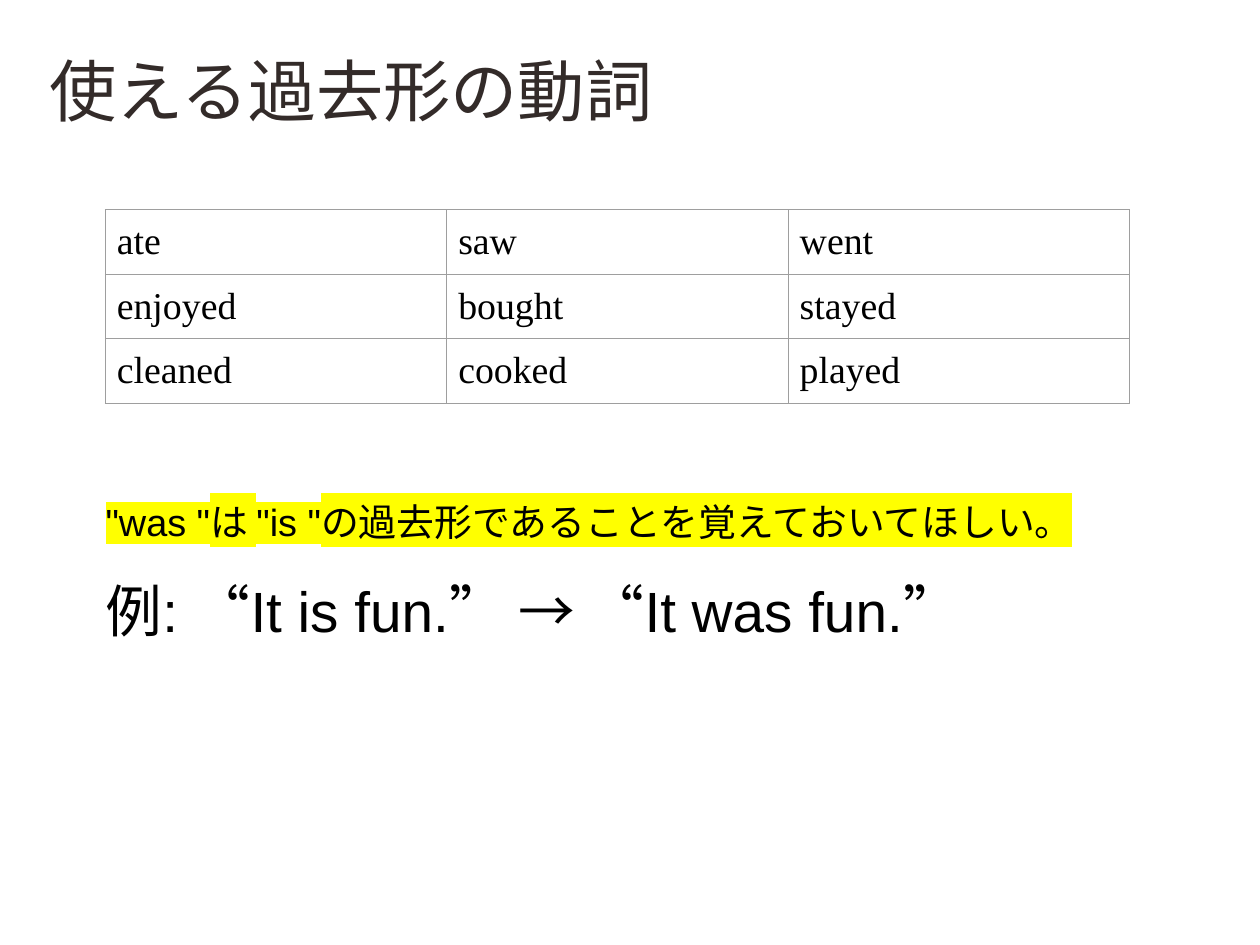
import pptx
import pptx.util
import pptx.dml.color
import pptx.enum.text
import pptx.oxml
import pptx.oxml.ns
from dataclasses import dataclass

TITLE = "使える過去形の動詞"
VERBS = [
    ("ate", "saw", "went"),
    ("enjoyed", "bought", "stayed"),
    ("cleaned", "cooked", "played"),
]
RULE = '"was "は "is "の過去形であることを覚えておいてほしい。'
SAMPLE = "例: “It is fun.” → “It was fun.”"


@dataclass
class Theme:
    serif: str = "Times New Roman"
    sans: str = "Arial"
    brown: str = "332B29"
    black: str = "000000"
    grey: str = "9E9E9E"
    yellow: str = "FFFF00"
    head: float = 42.7
    big: int = 36
    base: int = 24
    edge: float = 0.75
    lead: float = 0.9
    gap: int = 25


look = Theme()
Inches, Pt = pptx.util.Inches, pptx.util.Pt
WIDE, HIGH = Inches(11.11), Inches(8.33)
PAD = Inches(0.1)

# Boxes as left, top, width and height shares of the slide
HEAD = (0.03, 0.04, 0.94, 0.12)
GRID = (0.0837, 0.222, 0.813, 0.205)
NOTE = (0.075, 0.521, 0.874, 0.306)


def place(box):
    return [round(share * side) for share, side in zip(box, (WIDE, HIGH) * 2)]


def style(para, face, size, color):
    for run in para.runs:
        run.font.name = face
        run.font.size = Pt(size)
        run.font.color.rgb = pptx.dml.color.RGBColor.from_string(color)


def inset(item):
    item.margin_left = item.margin_right = PAD
    item.margin_top = item.margin_bottom = PAD


def add(parent, xml):
    node = pptx.oxml.parse_xml(xml.replace(
        ">", " " + pptx.oxml.ns.nsdecls("a") + ">", 1))
    parent.append(node)
    return node


def mark(run, color):
    """Highlight a run that already has its font colour."""
    props = run.font._element
    node = add(props, f'<a:highlight><a:srgbClr val="{color}"/></a:highlight>')
    props.find(pptx.oxml.ns.qn("a:solidFill")).addnext(node)


def border(cell):
    props = cell._tc.get_or_add_tcPr()
    for spot, side in enumerate("LRTB"):
        node = add(props, f'<a:ln{side} w="{Pt(look.edge)}"><a:solidFill>'
                   f'<a:srgbClr val="{look.grey}"/></a:solidFill></a:ln{side}>')
        props.insert(spot, node)


def title(slide):
    shape = slide.shapes.title
    shape.left, shape.top, shape.width, shape.height = place(HEAD)
    frame = shape.text_frame
    frame.text = TITLE
    frame.auto_size = pptx.enum.text.MSO_AUTO_SIZE.NONE
    frame.vertical_anchor = pptx.enum.text.MSO_ANCHOR.MIDDLE
    inset(frame)
    para = frame.paragraphs[0]
    para.alignment = pptx.enum.text.PP_ALIGN.LEFT
    para.line_spacing = look.lead
    style(para, look.serif, look.head, look.brown)


def table(slide):
    grid = slide.shapes.add_table(len(VERBS), len(VERBS[0]), *place(GRID)).table
    grid.first_row = grid.horz_banding = False
    for row, words in enumerate(VERBS):
        for col, word in enumerate(words):
            cell = grid.cell(row, col)
            cell.text = word
            cell.fill.background()
            inset(cell)
            border(cell)
            style(cell.text_frame.paragraphs[0], look.serif, look.base, look.black)


def note(slide):
    frame = slide.shapes.add_textbox(*place(NOTE)).text_frame
    frame.word_wrap = True
    inset(frame)
    frame.text = RULE + "\n" + SAMPLE
    rule, sample = frame.paragraphs
    for para, size in ((rule, look.base), (sample, look.big)):
        para.line_spacing = look.lead
        style(para, look.sans, size, look.black)
    sample.space_before = Pt(look.gap)
    mark(rule.runs[0], look.yellow)


def main():
    deck = pptx.Presentation()
    deck.slide_width, deck.slide_height = WIDE, HIGH
    slide = deck.slides.add_slide(deck.slide_layouts.get_by_name("Title Only"))
    title(slide)
    table(slide)
    note(slide)
    deck.save("out.pptx")


if __name__ == "__main__":
    main()
